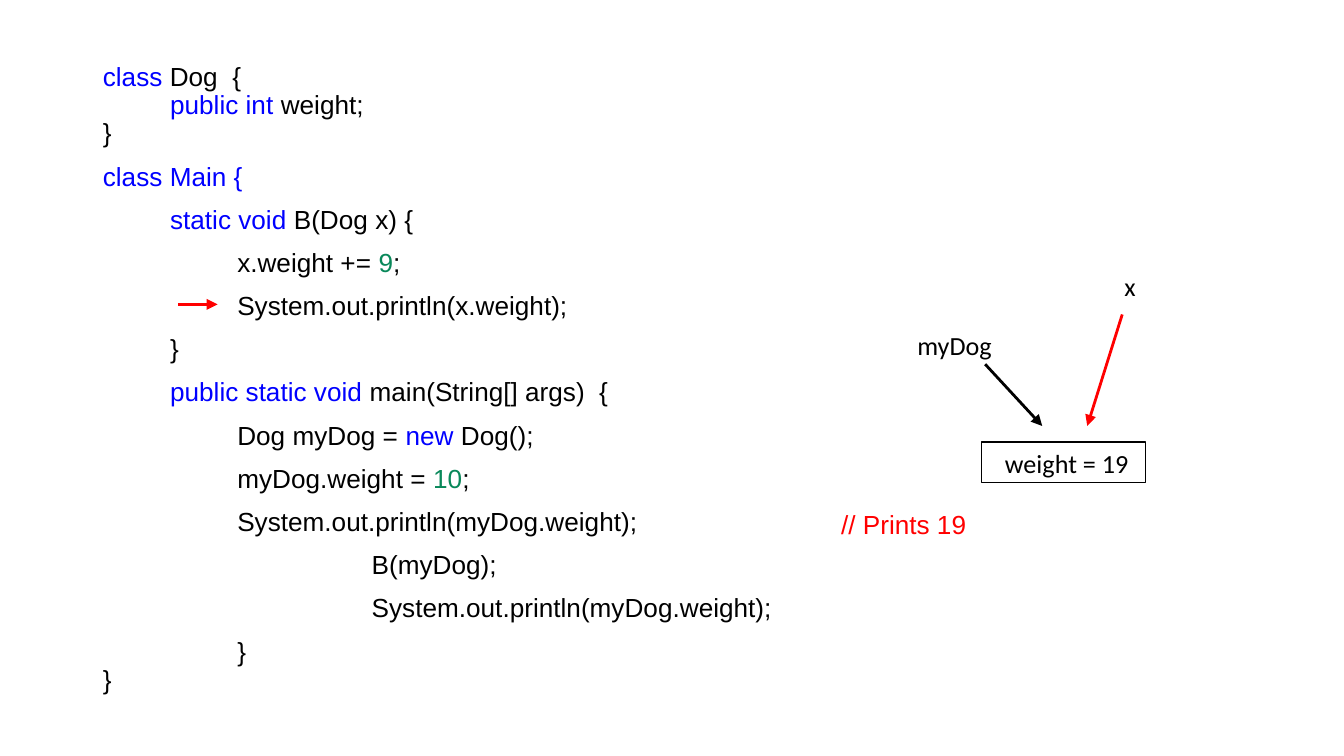
from dataclasses import dataclass

from lxml import etree
from pptx import Presentation
from pptx import util as u
from pptx.dml import color
from pptx.enum import shapes, text
from pptx.oxml import ns

PX = 4572


@dataclass(frozen=True)
class Theme:
    ink: str = "000000"
    keyword: str = "0000FF"
    number: str = "09885A"
    accent: str = "FF0000"
    code_font: str = "Arial"
    label_font: str = "Calibri"
    size: int = 14
    border: float = 0.75
    arrow: float = 1.5
    code_spacing: float = 0.9
    code_gap: int = 8


THEME = Theme()
TAB = 100
INSET = (15, 8, 15, 8)
CODE = [
    (0, 0, [("class", "keyword"), (" Dog  {", "ink")]),
    (1, 0, [("public int", "keyword"), (" weight;", "ink")]),
    (0, 0, [("}", "ink")]),
    (0, 1, [("class Main {", "keyword")]),
    (1, 1, [("static void", "keyword"), (" B(Dog x) {", "ink")]),
    (2, 1, [("x.weight += ", "ink"), ("9", "number"), (";", "ink")]),
    (2, 1, [("System.out.println(x.weight);", "ink")]),
    (1, 1, [("}", "ink")]),
    (1, 1, [("public static void", "keyword"), (" main(String[] args)  {", "ink")]),
    (2, 1, [("Dog myDog = ", "ink"), ("new", "keyword"), (" Dog();", "ink")]),
    (2, 1, [("myDog.weight = ", "ink"), ("10", "number"), (";", "ink")]),
    (2, 1, [("System.out.println(myDog.weight);", "ink")]),
    (4, 1, [("B(myDog);", "ink")]),
    (4, 1, [("System.out.println(myDog.weight);", "ink")]),
    (2, 1, [("}", "ink")]),
]


def px(value):
    return u.Emu(value * PX)


def apply(target, values):
    for name, value in values.items():
        setattr(target, name, value)


def rgb(name):
    return color.RGBColor.from_string(getattr(THEME, name))


def add_span(para, words, font, ink="ink"):
    span = para.add_run()
    span.text = words
    apply(span.font, {"name": font, "size": u.Pt(THEME.size)})
    span.font.color.rgb = rgb(ink)


def set_frame(shape, inset=INSET):
    frame = shape.text_frame
    sides = ("margin_left", "margin_top", "margin_right", "margin_bottom")
    apply(frame, dict(zip(sides, map(px, inset))))
    apply(frame, {"word_wrap": True, "vertical_anchor": text.MSO_ANCHOR.TOP})
    return frame


def add_text(page, left, top, width, height, inset=INSET):
    box = page.shapes.add_textbox(px(left), px(top), px(width), px(height))
    return set_frame(box, inset)


def add_arrow(page, start, end, ink):
    arrow = page.shapes.add_connector(
        shapes.MSO_CONNECTOR.STRAIGHT, *map(px, start + end))
    arrow.line.color.rgb = rgb(ink)
    arrow.line.width = u.Pt(THEME.arrow)
    outline = arrow.line._get_or_add_ln()
    etree.SubElement(outline, ns.qn("a:tailEnd"), type="triangle")
    etree.SubElement(arrow._element.spPr, ns.qn("a:effectLst"))


def add_code(page, left, top, width, height):
    frame = add_text(page, left, top, width, height)
    for index, (level, gap, spans) in enumerate(CODE):
        para = frame.add_paragraph() if index else frame.paragraphs[0]
        apply(para, {"line_spacing": THEME.code_spacing,
                     "space_before": u.Pt(gap * THEME.code_gap)})
        para._p.get_or_add_pPr().set("indent", str(px(level * TAB)))
        for words, ink in spans:
            add_span(para, words, THEME.code_font, ink)
    para.add_line_break()
    add_span(para, "}", THEME.code_font)
    add_arrow(page, (left + 127, top + 366), (left + 186, top + 366), "accent")


def add_output(page, left, top, width, height):
    para = add_text(page, left, top, width, height, (20,) * 4).paragraphs[0]
    para.line_spacing = THEME.code_spacing
    add_span(para, "// Prints 19", THEME.code_font, "accent")


def add_memory(page, left, top, width, height):
    value_width, value_height = 244, 60
    value_left = left + width - value_width
    value_top = top + height - value_height
    value = page.shapes.add_shape(
        shapes.MSO_SHAPE.RECTANGLE,
        *map(px, (value_left, value_top, value_width, value_height)))
    value.shadow.inherit = False
    value.fill.background()
    value.line.color.rgb = rgb("ink")
    value.line.width = u.Pt(THEME.border)
    para = set_frame(value).paragraphs[0]
    para.alignment = text.PP_ALIGN.CENTER
    add_span(para, " weight = 19", THEME.label_font)

    tip = value_top - 24
    for name, x, y, label_width, start, tip_x, ink in (
        ("myDog", 0, 88, 232, (116, 148), 201, "ink"),
        ("x", 308, 0, 46, (320, 74), 268, "accent"),
    ):
        frame = add_text(page, left + x, top + y, label_width, value_height)
        add_span(frame.paragraphs[0], name, THEME.label_font)
        add_arrow(page, (left + start[0], top + start[1]),
                  (left + tip_x, tip), ink)


def main():
    deck = Presentation()
    apply(deck, {"slide_width": px(2000), "slide_height": px(1125)})
    page = deck.slides.add_slide(deck.slide_layouts[6])
    add_code(page, 138, 87, 1116, 952)
    add_output(page, 1232, 742, 656, 170)
    add_memory(page, 1350, 394, 355, 324)
    deck.save("out.pptx")


if __name__ == "__main__":
    main()
